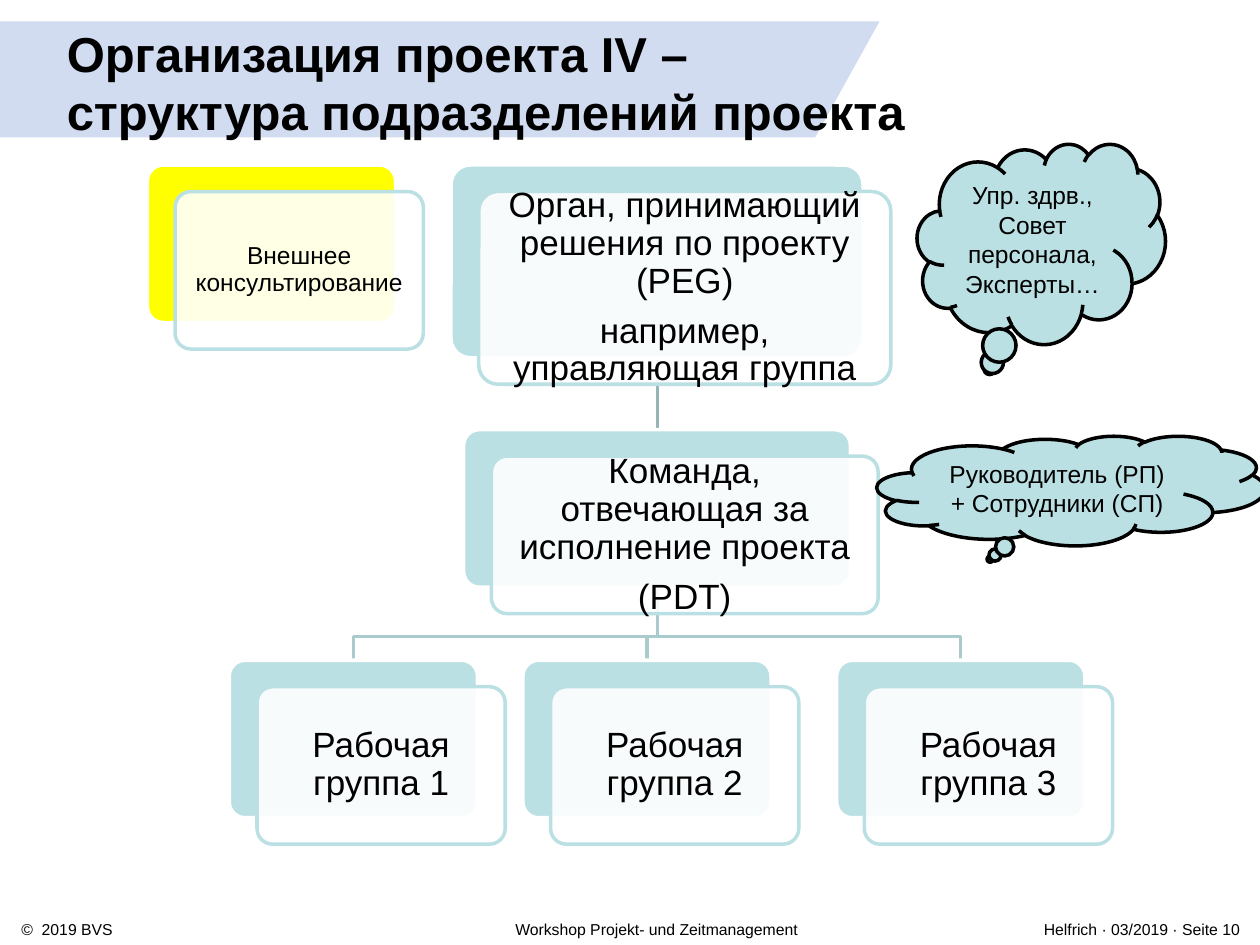
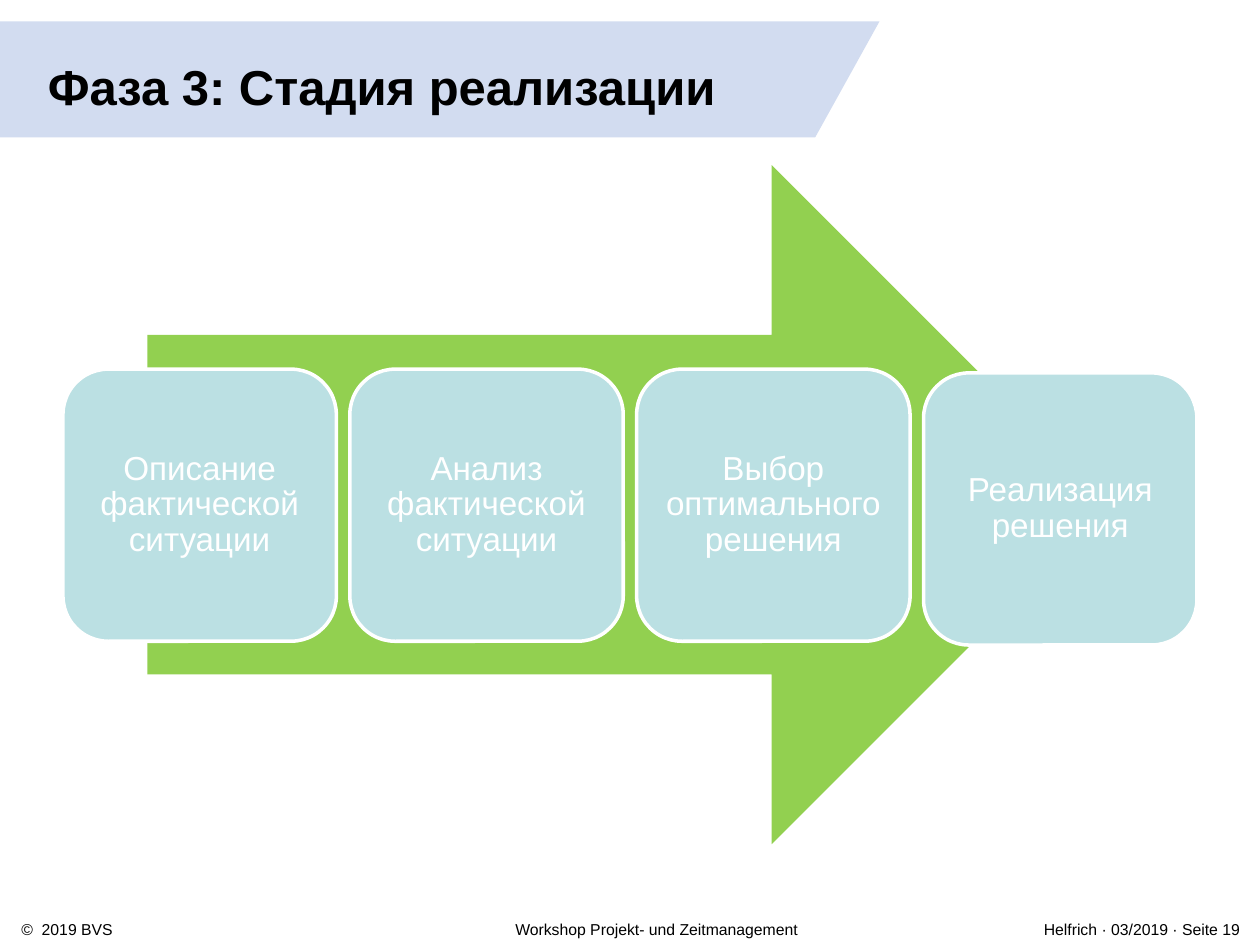
import lxml.etree
import pptx
import pptx.dml.color
import pptx.enum.shapes
import pptx.enum.text
import pptx.oxml.ns
import pptx.util

Inches = pptx.util.Inches
Pt = pptx.util.Pt
SHAPE = pptx.enum.shapes.MSO_SHAPE
ALIGN = pptx.enum.text.PP_ALIGN
ANCHOR = pptx.enum.text.MSO_ANCHOR
qn = pptx.oxml.ns.qn

FONT = "Arial"
BLACK, WHITE = "000000", "FFFFFF"
BAND, TEAL, YELLOW, GREEN = "D2DCF0", "BBE0E3", "FFFF00", "92D050"
STEM, BRANCH = "96B3B6", "AACBCE"


def rgb(value):
    return pptx.dml.color.RGBColor.from_string(value)


class Deck:
    def __init__(self):
        self.prs = pptx.Presentation()
        self.prs.slide_width = Inches(10)
        self.prs.slide_height = Inches(7.5)
        self.slide = None

    def new_slide(self, title_lines, title_box, number):
        self.slide = self.prs.slides.add_slide(self.prs.slide_layouts[5])
        self.band()
        self.footer(0.17, 3, "©  2019 BVS", ALIGN.LEFT)
        self.footer(3.5, 3.42, "Workshop Projekt- und Zeitmanagement", ALIGN.CENTER)
        self.footer(6.42, 3.42, f"Helfrich · 03/2019 · Seite {number}", ALIGN.RIGHT)
        self.title(title_lines, title_box)

    def band(self):
        builder = self.slide.shapes.build_freeform(0, Inches(0.17))
        corners = [(6.98, 0.17), (6.47, 1.09), (0, 1.09)]
        builder.add_line_segments([(Inches(x), Inches(y)) for x, y in corners])
        self.paint(builder.convert_to_shape(), BAND)

    def footer(self, left, width, text, align):
        sp = self.slide.shapes.add_textbox(
            Inches(left), Inches(7.25), Inches(width), Inches(0.25))
        self.frame(sp.text_frame, (0, 0.05), ANCHOR.TOP)
        self.paragraph(sp.text_frame.paragraphs[0], [text], 9, BLACK, align)

    def title(self, lines, box):
        sp = self.slide.shapes.title
        sp.left, sp.top, sp.width, sp.height = map(Inches, box)
        self.slide.shapes.element.append(sp.element)
        self.frame(sp.text_frame, (0.1, 0.05), ANCHOR.MIDDLE)
        self.paragraph(sp.text_frame.paragraphs[0], lines, 28, BLACK, ALIGN.LEFT, True)

    def frame(self, tf, insets, anchor):
        tf.word_wrap = True
        tf.auto_size = pptx.enum.text.MSO_AUTO_SIZE.NONE
        tf.vertical_anchor = anchor
        tf.margin_left = tf.margin_right = Inches(insets[0])
        tf.margin_top = tf.margin_bottom = Inches(insets[1])

    def paragraph(self, p, lines, size, color, align, bold=False):
        p.alignment = align
        for i, line in enumerate(lines):
            if i:
                p.add_line_break()
            r = p.add_run()
            r.text = line
            r.font.name = FONT
            r.font.size = Pt(size)
            r.font.bold = bold
            r.font.color.rgb = rgb(color)

    def paint(self, sp, fill, line=None, opacity=100):
        sp.shadow.inherit = False
        sp.fill.solid()
        sp.fill.fore_color.rgb = rgb(fill)
        if opacity < 100:
            clr = sp.element.spPr.find(qn("a:solidFill")).find(qn("a:srgbClr"))
            lxml.etree.SubElement(clr, qn("a:alpha"), val=str(opacity * 1000))
        if line:
            sp.line.color.rgb = rgb(line)
            sp.line.width = Pt(2)
        else:
            sp.line.fill.background()

    def shape(self, kind, box, fill, line=None, opacity=100, corner=None):
        sp = self.slide.shapes.add_shape(kind, *map(Inches, box))
        if corner is not None:
            sp.adjustments[0] = corner
        self.paint(sp, fill, line, opacity)
        return sp

    def label(self, sp, paragraphs, size, color, inset=0.08):
        tf = sp.text_frame
        self.frame(tf, (inset, inset), ANCHOR.MIDDLE)
        for i, text in enumerate(paragraphs):
            p = tf.add_paragraph() if i else tf.paragraphs[0]
            p.line_spacing = 0.9
            p.space_after = Pt(round(size * 0.35))
            self.paragraph(p, [text], size, color, ALIGN.CENTER)

    def card(self, left, top, width, height, paragraphs, fill=TEAL, size=20, inset=0.08):
        self.shape(SHAPE.ROUNDED_RECTANGLE, (left, top, width, height),
                   fill, WHITE, corner=0.1)
        panel = self.shape(SHAPE.ROUNDED_RECTANGLE,
                           (left + 0.22, top + 0.21, width, height),
                           WHITE, TEAL, opacity=90, corner=0.1)
        self.label(panel, paragraphs, size, BLACK, inset)

    def cloud(self, box, text):
        sp = self.shape(SHAPE.CLOUD_CALLOUT, box, TEAL, BLACK)
        self.frame(sp.text_frame, (0.1, 0.05), ANCHOR.MIDDLE)
        self.paragraph(sp.text_frame.paragraphs[0], [text], 14, BLACK, ALIGN.CENTER)

    def line(self, x1, y1, x2, y2, color):
        cn = self.slide.shapes.add_connector(
            pptx.enum.shapes.MSO_CONNECTOR.STRAIGHT, *map(Inches, (x1, y1, x2, y2)))
        cn.line.color.rgb = rgb(color)
        cn.line.width = Pt(2)
        lxml.etree.SubElement(cn.element.spPr, qn("a:effectLst"))


def organisation(deck):
    deck.new_slide(["Организация проекта IV – ", "структура подразделений проекта"],
                   (0.43, 0.21, 9.19, 0.88), 10)
    width, height = 1.97, 1.25
    axis, team_top, bus, group_top = 5.22, 3.41, 5.05, 5.24
    group_lefts = [1.82, 4.15, 6.64]
    drops = [left + width / 2 for left in group_lefts]

    deck.line(axis, 2.84, axis, team_top, STEM)
    deck.line(axis, team_top + height, axis, bus, BRANCH)
    deck.line(drops[0], bus, drops[-1], bus, BRANCH)
    for x in drops:
        deck.line(x, bus, x, group_top, BRANCH)

    deck.card(1.17, 1.31, width, height, ["Внешнее консультирование"], YELLOW, 14, 0.06)
    deck.card(3.58, 1.31, 3.27, 1.53, ["Орган, принимающий решения по проекту (PEG)",
                                       "например, управляющая группа"])
    deck.card(3.68, team_top, 3.07, height,
              ["Команда, отвечающая за исполнение проекта", "(PDT)"])
    for number, left in enumerate(group_lefts, 1):
        deck.card(left, group_top, width, height, [f"Рабочая группа {number}"])

    deck.cloud((6.96, 3.46, 3.08, 0.87), "Руководитель (РП) + Сотрудники (СП)")
    deck.cloud((7.28, 1.14, 1.97, 1.59), "Упр. здрв., Совет персонала, Эксперты…")


def realisation(deck):
    deck.new_slide(["Фаза 3: Стадия реализации"], (0.28, 0.06, 8.19, 1.25), 19)
    deck.shape(SHAPE.RIGHT_ARROW, (1.17, 1.31, 7.65, 5.39), GREEN)
    steps = [("Описание фактической ситуации", 2.93),
             ("Анализ фактической ситуации", 2.93),
             ("Выбор оптимального решения", 2.93),
             ("Реализация решения", 2.96)]
    first_left, last_left = 0.5, 7.33
    pitch = (last_left - first_left) / (len(steps) - 1)
    for i, (text, top) in enumerate(steps):
        step = deck.shape(SHAPE.ROUNDED_RECTANGLE,
                          (first_left + i * pitch, top, 2.17, 2.16), TEAL, WHITE)
        deck.label(step, [text], 19, WHITE)


def main():
    deck = Deck()
    organisation(deck)
    realisation(deck)
    deck.prs.save("out.pptx")


if __name__ == "__main__":
    main()
